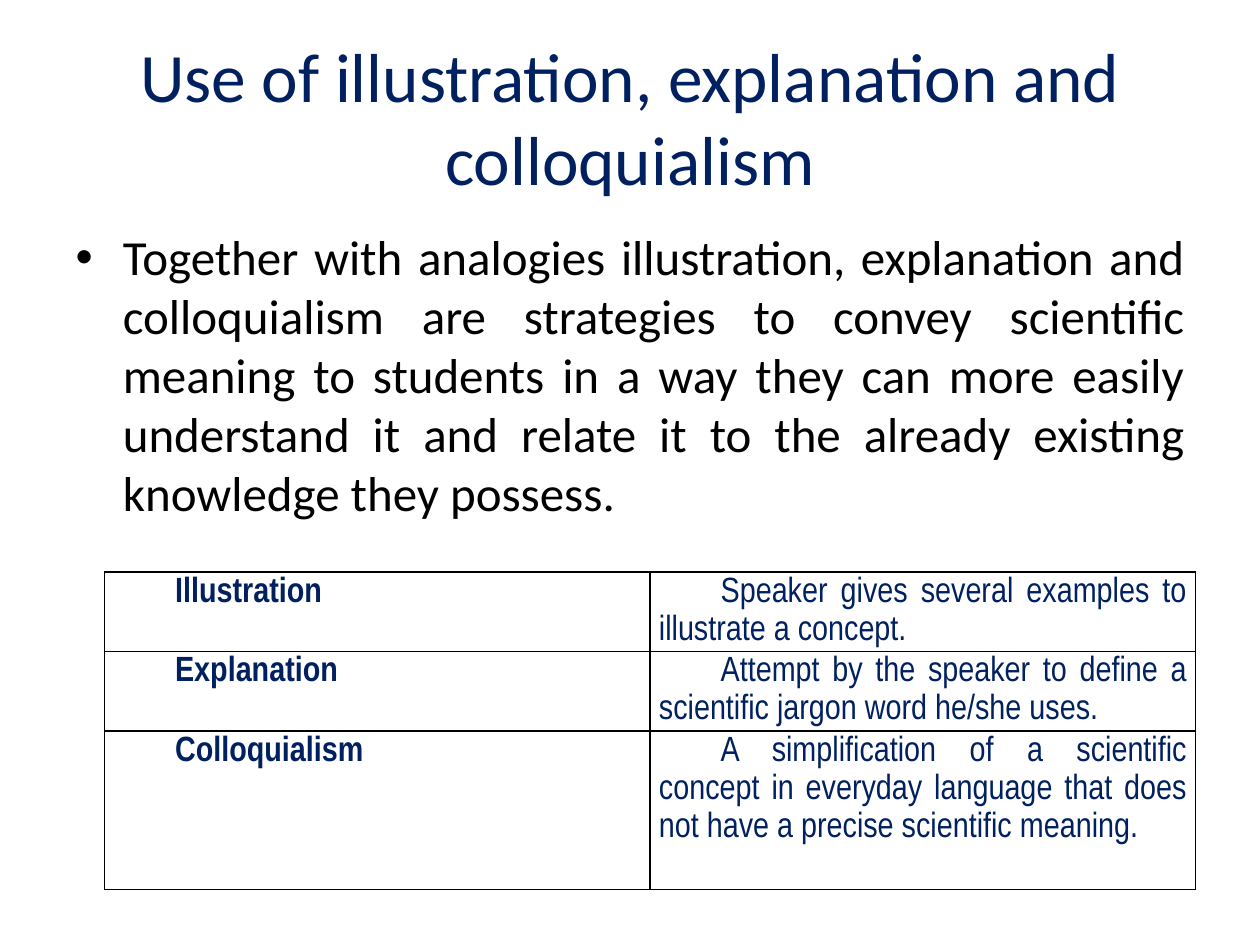
import pptx
import pptx.util
import pptx.dml.color
import pptx.enum.text
import pptx.oxml
import pptx.oxml.ns
from pptx.util import Inches

COLORS = {"navy": "002060", "black": "000000"}
NAMESPACE = pptx.oxml.ns.nsdecls("a")
ALIGN = pptx.enum.text.PP_ALIGN


def format_text(paragraph, font_name, size, color, alignment, bold=False):
    paragraph.alignment = alignment
    for run in paragraph.runs:
        run.font.name = font_name
        run.font.size = pptx.util.Pt(size)
        run.font.bold = bold
        run.font.color.rgb = pptx.dml.color.RGBColor.from_string(COLORS[color])


def add_borders(cell):
    properties = cell._tc.get_or_add_tcPr()
    for position, side in enumerate(("lnL", "lnR", "lnT", "lnB")):
        properties.insert(position, pptx.oxml.parse_xml(
            f'<a:{side} {NAMESPACE} w="12700"><a:solidFill>'
            f'<a:srgbClr val="{COLORS["black"]}"/></a:solidFill></a:{side}>'))


presentation = pptx.Presentation()
presentation.slide_width = Inches(10)
presentation.slide_height = Inches(7.5)
slide = presentation.slides.add_slide(presentation.slide_layouts[1])

# Title
title = slide.shapes.title
title.left, title.top, title.width, title.height = map(Inches, (0.5, 0.3, 9, 1.25))
title.text_frame.text = "Use of illustration, explanation and colloquialism"
title.text_frame.vertical_anchor = pptx.enum.text.MSO_ANCHOR.MIDDLE
format_text(title.text_frame.paragraphs[0], "Calibri", 39.6, "navy", ALIGN.CENTER)

# Introductory bullet
body = slide.placeholders[1]
body.left, body.top, body.width, body.height = map(Inches, (0.5, 1.75, 9, 4.95))
body.text_frame.text = (
    "Together with analogies illustration, explanation and colloquialism are "
    "strategies to convey scientific meaning to students in a way they can more "
    "easily understand it and relate it to the already existing knowledge they possess.")
format_text(body.text_frame.paragraphs[0], "Calibri", 28, "black", ALIGN.JUSTIFY)

# Table of strategies
strategies = [
    ("Illustration", "Speaker gives several examples to illustrate a concept."),
    ("Explanation", "Attempt by the speaker to define a scientific jargon word he/she uses."),
    ("Colloquialism", "A simplification of a scientific concept in everyday language "
                      "that does not have a precise scientific meaning."),
]
row_heights = (0.63, 0.63, 1.26)
table = slide.shapes.add_table(
    len(strategies), 2, Inches(0.83), Inches(4.54),
    Inches(8.66), Inches(sum(row_heights))).table
table.first_row = False
table.horz_banding = False

for row_index, texts in enumerate(strategies):
    table.rows[row_index].height = Inches(row_heights[row_index])
    for column_index, text in enumerate(texts):
        cell = table.cell(row_index, column_index)
        cell.margin_left = cell.margin_right = Inches(0.07)
        cell.margin_top = cell.margin_bottom = 0
        cell.fill.background()
        add_borders(cell)
        cell.text_frame.text = text
        paragraph = cell.text_frame.paragraphs[0]
        paragraph.line_spacing = 1.15
        paragraph._p.get_or_add_pPr().set("indent", str(Inches(0.49)))
        format_text(paragraph, "Arial Narrow", 20, "navy", ALIGN.JUSTIFY,
                    bold=column_index == 0)

presentation.save("out.pptx")
